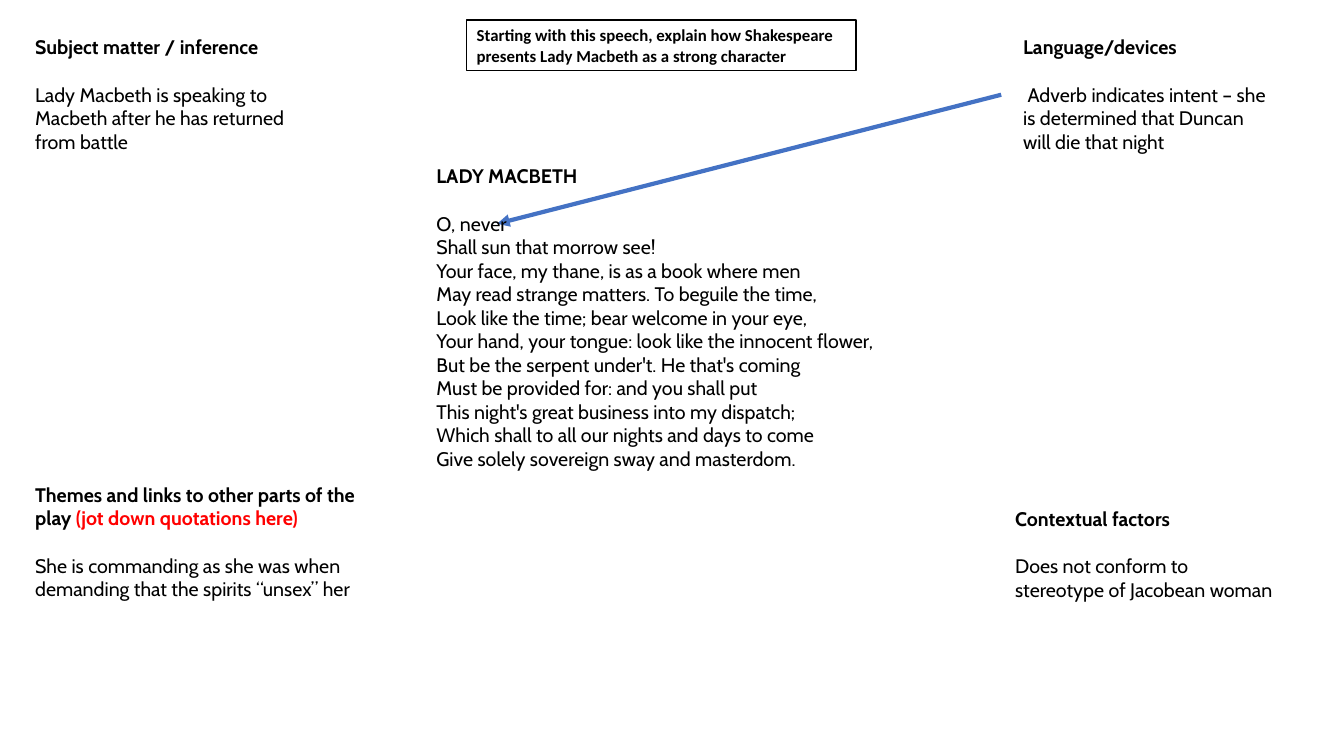
from dataclasses import dataclass

from lxml.etree import SubElement
from pptx import Presentation
from pptx.dml.color import RGBColor
from pptx.enum.shapes import MSO_CONNECTOR, MSO_SHAPE
from pptx.enum.text import MSO_ANCHOR, MSO_AUTO_SIZE, PP_ALIGN
from pptx.oxml.ns import qn
from pptx.util import Inches, Pt


@dataclass(frozen=True)
class Theme:
    ink: RGBColor = RGBColor(0, 0, 0)
    prompt: RGBColor = RGBColor(255, 0, 0)
    arrow: RGBColor = RGBColor(0x44, 0x72, 0xC4)
    note_font: str = "Cabin"
    question_font: str = "Calibri"
    note_size: Pt = Pt(14)
    question_size: Pt = Pt(12)
    heading_gap: Pt = Pt(17)
    border_width: Pt = Pt(1)
    arrow_width: Pt = Pt(3)


THEME = Theme()

SPEECH = [
    "O, never",
    "Shall sun that morrow see!",
    "Your face, my thane, is as a book where men",
    "May read strange matters. To beguile the time,",
    "Look like the time; bear welcome in your eye,",
    "Your hand, your tongue: look like the innocent flower,",
    "But be the serpent under't. He that's coming",
    "Must be provided for: and you shall put",
    "This night's great business into my dispatch;",
    "Which shall to all our nights and days to come",
    "Give solely sovereign sway and masterdom.",
]


def add_run(paragraph, text, bold=False, color=THEME.ink,
            font=THEME.note_font, size=THEME.note_size):
    run = paragraph.add_run()
    run.text = text
    run.font.name = font
    run.font.size = size
    run.font.bold = bold
    run.font.color.rgb = color


def add_note(slide, box, heading, lines, prompt="", lead=""):
    shape = slide.shapes.add_textbox(*map(Inches, box))
    frame = shape.text_frame
    frame.word_wrap = True
    frame.auto_size = MSO_AUTO_SIZE.SHAPE_TO_FIT_TEXT
    title = frame.paragraphs[0]
    title.space_after = THEME.heading_gap
    add_run(title, heading, bold=True)
    if prompt:
        add_run(title, prompt, bold=True, color=THEME.prompt)
    body = frame.add_paragraph()
    if lead:
        add_run(body, lead, bold=True)
    for index, line in enumerate(lines):
        if index:
            body.add_line_break()
        add_run(body, line)


def add_question(slide, box, text):
    shape = slide.shapes.add_shape(MSO_SHAPE.RECTANGLE, *map(Inches, box))
    shape.shadow.inherit = False
    shape.fill.background()
    shape.line.color.rgb = THEME.ink
    shape.line.width = THEME.border_width
    frame = shape.text_frame
    frame.word_wrap = True
    frame.auto_size = MSO_AUTO_SIZE.SHAPE_TO_FIT_TEXT
    frame.vertical_anchor = MSO_ANCHOR.TOP
    paragraph = frame.paragraphs[0]
    paragraph.alignment = PP_ALIGN.LEFT
    add_run(paragraph, text, bold=True, font=THEME.question_font,
            size=THEME.question_size)


def add_arrow(slide, start, end):
    connector = slide.shapes.add_connector(
        MSO_CONNECTOR.STRAIGHT, *map(Inches, (*start, *end)))
    connector.line.color.rgb = THEME.arrow
    connector.line.width = THEME.arrow_width
    SubElement(connector.line._get_or_add_ln(), qn("a:tailEnd"), type="triangle")
    SubElement(connector._element.spPr, qn("a:effectLst"))


def build_annotated_speech(slide):
    add_note(slide, (0.25, 0.3, 2.83, 1.28), "Subject matter / inference",
             ["Lady Macbeth is speaking to Macbeth after he has returned from battle"])
    add_note(slide, (10.05, 0.3, 2.67, 1.28), "Language/devices",
             ["Adverb indicates intent – she is determined that Duncan will die that night"],
             lead=" ")
    add_note(slide, (0.25, 4.74, 3.55, 1.51), "Themes and links to other parts of the play ",
             ["She is commanding as she was when demanding that the spirits “unsex” her"],
             prompt="(jot down quotations here)")
    add_note(slide, (9.97, 4.98, 2.83, 1.04), "Contextual factors",
             ["Does not conform to stereotype of Jacobean woman"])
    add_question(slide, (4.63, 0.2, 3.86, 0.5),
                 "Starting with this speech, explain how Shakespeare presents "
                 "Lady Macbeth as a strong character")
    add_arrow(slide, (9.93, 0.94), (4.93, 2.22))
    add_note(slide, (4.23, 1.58, 5.12, 3.16), "LADY MACBETH", SPEECH)


def main():
    presentation = Presentation()
    presentation.slide_width = Inches(13.33)
    presentation.slide_height = Inches(7.5)
    slide = presentation.slides.add_slide(presentation.slide_layouts[6])
    build_annotated_speech(slide)
    presentation.save("out.pptx")


if __name__ == "__main__":
    main()
